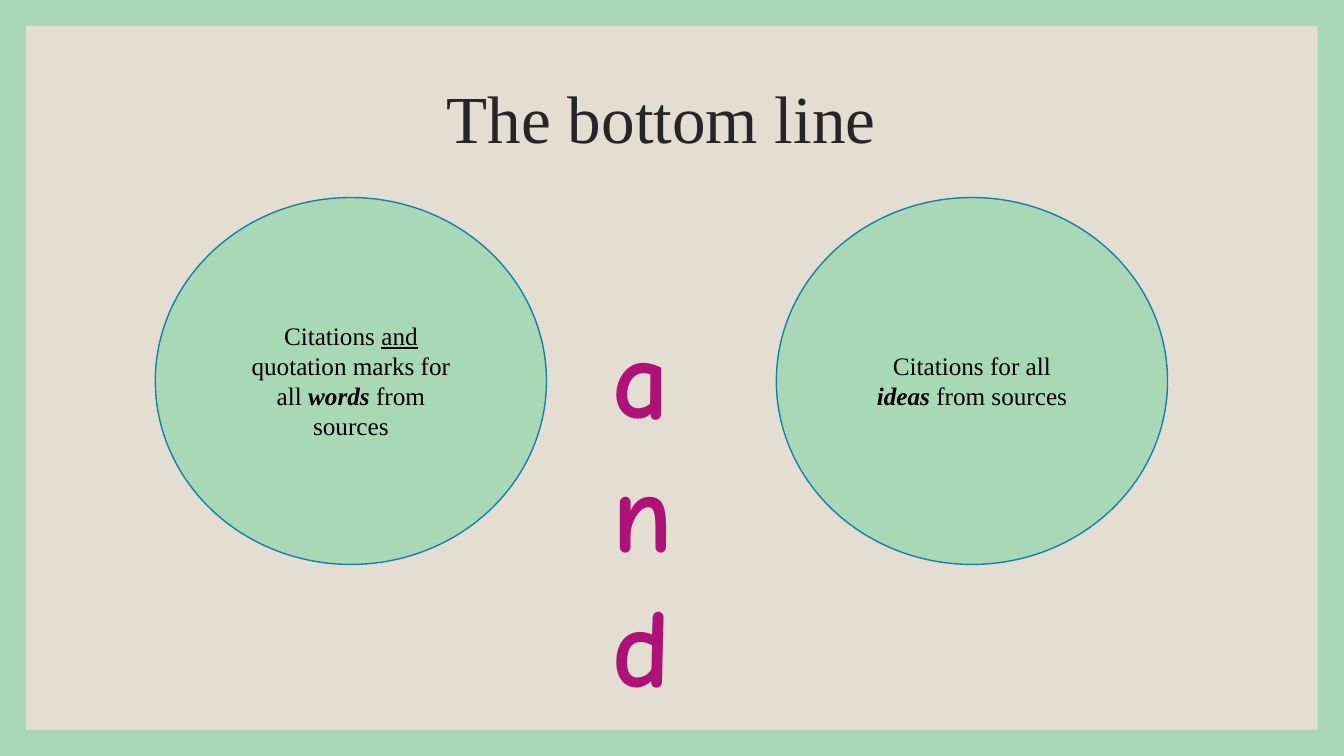
from pptx import Presentation
from pptx.dml.color import RGBColor
from pptx.enum.shapes import MSO_SHAPE
from pptx.enum.text import MSO_ANCHOR, PP_ALIGN
from pptx.util import Inches, Pt

RECTANGLE, OVAL = MSO_SHAPE.RECTANGLE, MSO_SHAPE.OVAL
CENTER, LEFT = PP_ALIGN.CENTER, PP_ALIGN.LEFT
TOP, MIDDLE = MSO_ANCHOR.TOP, MSO_ANCHOR.MIDDLE
TITLE_ONLY = 5

WIDTH, HEIGHT, MARGIN = 13.33, 7.5, 0.26
GREEN, SAND, BLUE, MAGENTA = "A9D8B7", "E3DED1", "1580A9", "AE1276"
SERIF, HAND = "Times New Roman", "Comic Neue"

TITLE_FONT = {"name": SERIF, "size": Pt(48), "bold": False}
BODY_FONT = {"name": SERIF, "size": Pt(18)}
AND_FONT = {"name": HAND, "size": Pt(80), "bold": True}
STRONG = {"bold": True, "italic": True}

CIRCLE_TOP, CIRCLE_WIDTH, CIRCLE_HEIGHT = 1.96, 3.88, 3.64
CIRCLES = [
    (1.54, 1.31, [("Citations ", {}), ("and", {"underline": True}),
                  (" quotation marks for all ", {}), ("words", STRONG),
                  (" from sources", {})]),
    (7.70, 0.71, [("Citations for all ", {}), ("ideas", STRONG),
                  (" from sources", {})]),
]


def paint(color_format, color):
    color_format.rgb = RGBColor.from_string(color)


def fill_solid(fill, color):
    fill.solid()
    paint(fill.fore_color, color)


def write(shape, spans, font, color, align=CENTER, anchor=TOP):
    """Write (text, format) spans as one paragraph."""
    frame = shape.text_frame
    frame.word_wrap = True
    frame.vertical_anchor = anchor
    para = frame.paragraphs[0]
    para.alignment = align
    for text, extra in spans:
        span = para.add_run()
        span.text = text
        for name, value in {**font, **extra}.items():
            setattr(span.font, name, value)
        paint(span.font.color, color)
    return para


def add_filled(page, kind, box, color, outline=None):
    shape = page.shapes.add_shape(kind, *map(Inches, box))
    shape.shadow.inherit = False
    fill_solid(shape.fill, color)
    if outline:
        paint(shape.line.color, outline)
        shape.line.width = Pt(1)
    else:
        shape.line.fill.background()
    return shape


def add_background(page):
    fill_solid(page.background.fill, GREEN)
    box = (MARGIN, MARGIN, WIDTH - 2 * MARGIN, HEIGHT - 2 * MARGIN)
    panel = add_filled(page, RECTANGLE, box, SAND)
    panel.element.addnext(page.shapes.title.element)


def add_title(page, box, text):
    title = page.shapes.title
    for name, value in zip(("left", "top", "width", "height"), box):
        setattr(title, name, Inches(value))
    para = write(title, [(text, {})], TITLE_FONT, "262626", anchor=MIDDLE)
    para.line_spacing = 0.9


def add_circle(page, box, text_height, spans):
    """Draw a circle with a text box in its middle."""
    left, top, width, height = box
    add_filled(page, OVAL, box, GREEN, BLUE)
    text_width = 0.603 * width
    text_box = (left + (width - text_width) / 2,
                top + (height - text_height) / 2, text_width, text_height)
    label = page.shapes.add_textbox(*map(Inches, text_box))
    write(label, spans, BODY_FONT, "000000")


def add_joining_word(page, box, word):
    """Set a word in a box so narrow that each letter takes a line."""
    label = page.shapes.add_textbox(*map(Inches, box))
    write(label, [(word, {})], AND_FONT, MAGENTA, LEFT)


def main():
    deck = Presentation()
    deck.slide_width, deck.slide_height = Inches(WIDTH), Inches(HEIGHT)
    page = deck.slides.add_slide(deck.slide_layouts[TITLE_ONLY])
    add_background(page)
    add_title(page, (1.06, 0.46, 11, 1.5), "The bottom line")
    for left, text_height, spans in CIRCLES:
        box = (left, CIRCLE_TOP, CIRCLE_WIDTH, CIRCLE_HEIGHT)
        add_circle(page, box, text_height, spans)
    add_joining_word(page, (5.98, 2.99, 1.15, 1.45), "and")
    deck.save("out.pptx")


if __name__ == "__main__":
    main()
